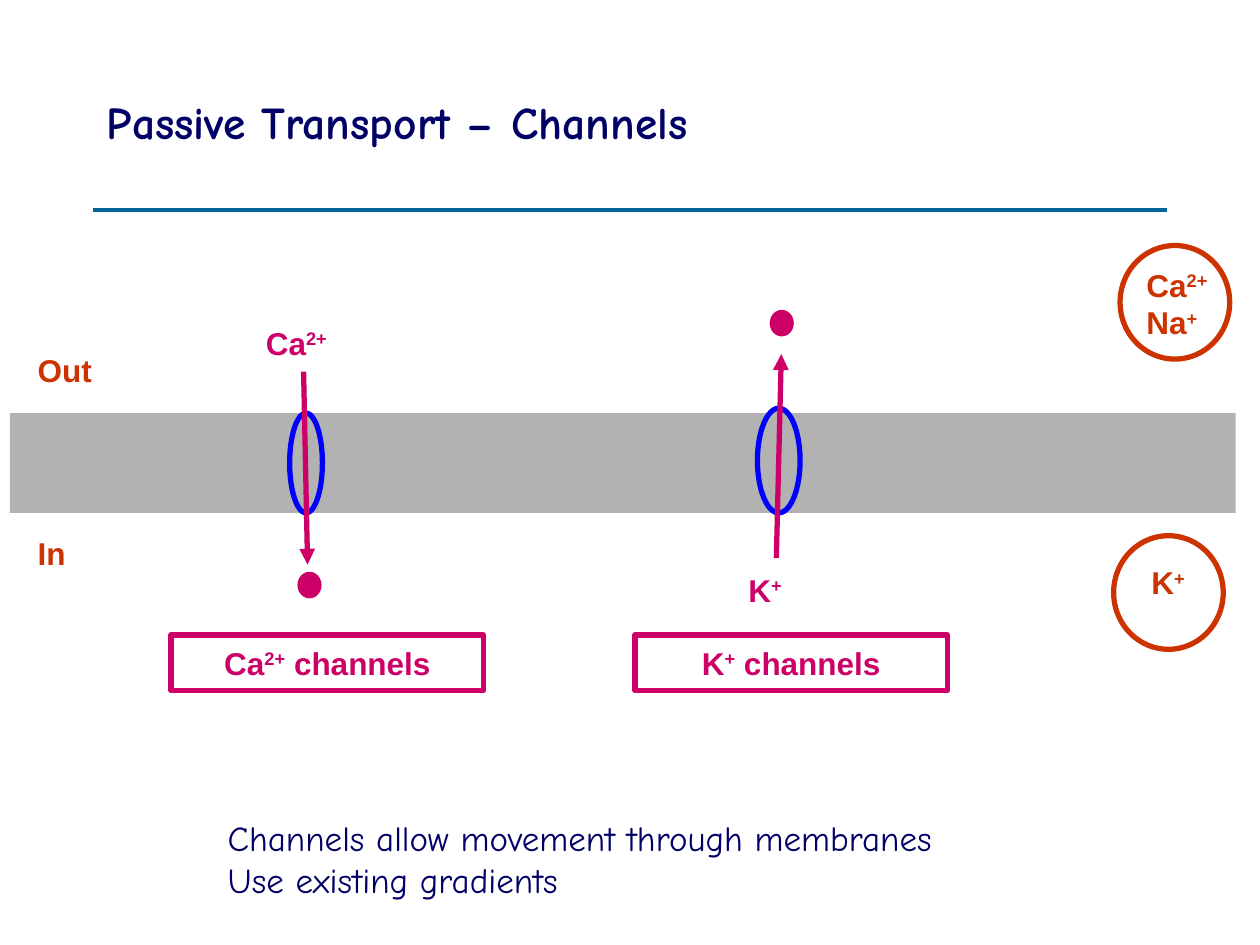
from lxml import etree
from pptx import Presentation
from pptx.dml.color import RGBColor
from pptx.enum.shapes import MSO_CONNECTOR, MSO_SHAPE
from pptx.enum.text import MSO_ANCHOR, PP_ALIGN
from pptx.oxml.ns import qn
from pptx.util import Cm, Pt

STRAIGHT = MSO_CONNECTOR.STRAIGHT
OVAL, RECTANGLE = MSO_SHAPE.OVAL, MSO_SHAPE.RECTANGLE
MIDDLE, TOP = MSO_ANCHOR.MIDDLE, MSO_ANCHOR.TOP
LEFT, CENTER = PP_ALIGN.LEFT, PP_ALIGN.CENTER

NAVY = RGBColor(0x00, 0x00, 0x66)
TEAL = RGBColor(0x00, 0x66, 0x99)
GREY = RGBColor(0xB2, 0xB2, 0xB2)
MAGENTA = RGBColor(0xCC, 0x00, 0x66)
RUST = RGBColor(0xCC, 0x33, 0x00)
BLUE = RGBColor(0x00, 0x00, 0xFF)

HEADING_FONT = "Comic Neue"
LABEL_FONT = "Arial"
CALCIUM = ("Ca", "2+")
SODIUM = ("Na", "+")
POTASSIUM = ("K", "+")


def write_lines(frame, lines, color, size=18, font=LABEL_FONT, bold=True,
                align=LEFT, anchor=TOP):
    """Each line is a tuple of runs in which every second run is superscript."""
    frame.word_wrap = True
    frame.vertical_anchor = anchor
    for number, line in enumerate(lines):
        paragraph = frame.add_paragraph() if number else frame.paragraphs[0]
        paragraph.alignment = align
        for position, words in enumerate(line):
            run = paragraph.add_run()
            run.text = words
            run.font.name = font
            run.font.size = Pt(size)
            run.font.bold = bold
            run.font.color.rgb = color
            if position % 2:
                run.font._element.set("baseline", "30000")


def add_label(slide, left, top, width, height, lines, color, **style):
    label = slide.shapes.add_textbox(Cm(left), Cm(top), Cm(width), Cm(height))
    write_lines(label.text_frame, lines, color, **style)


def add_figure(slide, preset, left, top, width, height, fill=None, outline=None):
    figure = slide.shapes.add_shape(preset, Cm(left), Cm(top), Cm(width), Cm(height))
    figure.shadow.inherit = False
    if fill is None:
        figure.fill.background()
    else:
        figure.fill.solid()
        figure.fill.fore_color.rgb = fill
    if outline is None:
        figure.line.fill.background()
    else:
        figure.line.color.rgb = outline
        figure.line.width = Pt(3)
    return figure


def add_line(slide, start, end, color, weight, arrow=False):
    line = slide.shapes.add_connector(STRAIGHT, *map(Cm, start + end))
    line.line.color.rgb = color
    line.line.width = Pt(weight)
    if arrow:
        etree.SubElement(line.line._get_or_add_ln(), qn("a:tailEnd"), type="triangle")
    etree.SubElement(line._element.spPr, qn("a:effectLst"))


def add_title(slide, words):
    title = slide.shapes.title
    title.left, title.top, title.width, title.height = map(Cm, (1.9, 0.64, 21.59, 3.61))
    write_lines(title.text_frame, [(words,)], NAVY, size=26, font=HEADING_FONT,
                anchor=MIDDLE)


def add_channel(slide, pore, arrow_start, arrow_end, ion_place, dot_place,
                name_left, ion):
    add_figure(slide, OVAL, *pore, fill=GREY, outline=BLUE)
    add_line(slide, arrow_start, arrow_end, MAGENTA, 3, arrow=True)
    add_figure(slide, OVAL, *dot_place, 0.38, 0.43, fill=MAGENTA, outline=MAGENTA)
    add_label(slide, *ion_place, 1.85, 1.02, [ion], MAGENTA, align=CENTER)
    name = add_figure(slide, RECTANGLE, name_left, 12.8, 6.3, 1.12, outline=MAGENTA)
    write_lines(name.text_frame, [ion + (" channels",)], MAGENTA, align=CENTER,
                anchor=MIDDLE)


def main():
    deck = Presentation()
    deck.slide_width, deck.slide_height = Cm(25.4), Cm(19.05)
    slide = deck.slides.add_slide(deck.slide_layouts[5])

    add_line(slide, (1.88, 4.24), (23.52, 4.24), TEAL, 2.25)
    add_title(slide, "Passive Transport – Channels")
    add_figure(slide, RECTANGLE, 0.2, 8.33, 24.71, 2.01, fill=GREY)

    for side, top in (("Out", 6.96), ("In", 10.64)):
        add_label(slide, 0.51, top, 2.67, 1.02, [(side,)], RUST)

    add_channel(slide, (5.84, 8.33, 0.66, 2.01), (6.12, 7.49), (6.2, 11.38),
                (5.05, 6.4), (6.05, 11.58), 3.45, CALCIUM)
    add_channel(slide, (15.27, 8.23, 0.86, 2.11), (15.65, 11.25), (15.75, 7.14),
                (14.5, 11.38), (15.57, 6.3), 12.8, POTASSIUM)

    add_label(slide, 22.86, 5.23, 1.98, 1.78, [CALCIUM, SODIUM], RUST)
    add_label(slide, 22.56, 11.23, 1.98, 1.02, [POTASSIUM], RUST, align=CENTER)
    for left, top in ((22.58, 4.95), (22.45, 10.8)):
        add_figure(slide, OVAL, left, top, 2.21, 2.29, outline=RUST)

    add_label(slide, 4.34, 16.33, 19.76, 1.96,
              [("Channels allow movement through membranes",),
               ("Use existing gradients",)],
              NAVY, size=20, font=HEADING_FONT, bold=False)

    deck.save("out.pptx")


if __name__ == "__main__":
    main()
